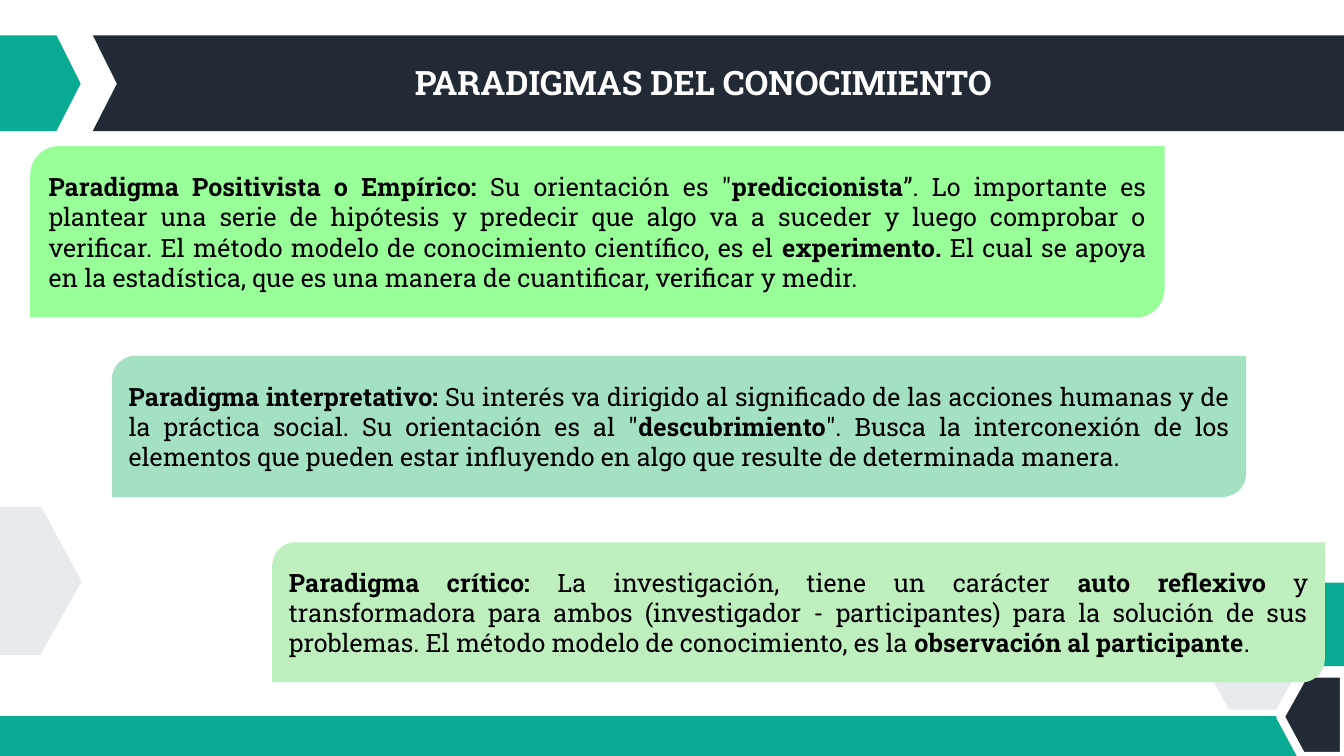
import pptx
import pptx.dml.color
import pptx.enum.shapes
import pptx.enum.text
import pptx.oxml
import pptx.oxml.ns
import pptx.util
from pptx.util import Inches

FONT = "Roboto Slab"
GREEN, DARK, GRAY, WHITE, BLACK = "09AB93", "222A35", "D9DEE2", "FFFFFF", "000000"
TITLE = "PARADIGMAS DEL CONOCIMIENTO"

# Each card: left, top, width, height, fill, text pieces that alternate bold and regular
CARDS = [
    (0.3, 1.45, 11.25, 1.7, "99FF99", [
        "Paradigma Positivista o Empírico: ",
        'Su orientación es "',
        "prediccionista",
        "”. Lo importante es plantear una serie de hipótesis y predecir que algo va a "
        "suceder y luego comprobar o verificar. El método modelo de conocimiento "
        "científico, es el ",
        "experimento.",
        " El cual se apoya en la estadística, que es una manera de cuantificar, "
        "verificar y medir.",
    ]),
    (1.11, 3.53, 11.25, 1.4, "A3E1C2", [
        "Paradigma interpretativo: ",
        "Su interés va dirigido al significado de las acciones humanas y de la práctica "
        'social. Su orientación es al "',
        "descubrimiento",
        '". Busca la interconexión de los elementos que pueden estar influyendo en algo '
        "que resulte de determinada manera.",
    ]),
    (2.7, 5.38, 10.44, 1.39, "BFEFBF", [
        "Paradigma crítico: ",
        "La investigación, tiene un carácter ",
        "auto reflexivo ",
        "y transformadora para ambos (investigador - participantes) para la solución de "
        "sus problemas. El método modelo de conocimiento, es la ",
        "observación al participante",
        ".",
    ]),
]

# Each outline: fill, opacity in percent, white border in points, corner points
OUTLINES = [
    (GRAY, 60, 0, [(11.96, 6.62), (12.19, 6.21), (12.66, 6.21), (12.89, 6.62),
                   (12.66, 7.04), (12.19, 7.04)]),
    (GREEN, 100, 0, [(12.95, 5.78), (13.33, 5.78), (13.33, 6.61), (12.95, 6.61),
                     (12.75, 6.2)]),
    (GREEN, 100, 0, [(0, 7.1), (13.33, 7.1), (13.33, 7.5), (0, 7.5)]),
    (DARK, 100, 6, [(13.33, 6.68), (13.33, 7.5), (12.91, 7.5), (12.7, 7.11),
                    (12.94, 6.68)]),
    (GREEN, 100, 0, [(0, 0.35), (0.56, 0.35), (0.8, 0.83), (0.56, 1.3), (0, 1.3)]),
    (DARK, 100, 0, [(0.92, 0.35), (13.33, 0.35), (13.33, 1.3), (0.92, 1.3),
                    (1.16, 0.83)]),
    (GRAY, 60, 0, [(0, 5.03), (0.41, 5.03), (0.81, 5.77), (0.4, 6.5), (0, 6.5)]),
]


def color(hex_string):
    return pptx.dml.color.RGBColor.from_string(hex_string)


def paint(shape, fill, opacity=100, border=0):
    shape.shadow.inherit = False
    shape.fill.solid()
    shape.fill.fore_color.rgb = color(fill)
    if opacity < 100:
        fill_color = shape.fill._xPr.find(".//" + pptx.oxml.ns.qn("a:srgbClr"))
        alpha = pptx.oxml.parse_xml(
            f'<a:alpha {pptx.oxml.ns.nsdecls("a")} val="{opacity * 1000}"/>')
        fill_color.append(alpha)
    if border:
        shape.line.color.rgb = color(WHITE)
        shape.line.width = pptx.util.Pt(border)
    else:
        shape.line.fill.background()


def style(paragraph, size, font_color, alignment):
    paragraph.alignment = alignment
    paragraph.font.name = FONT
    paragraph.font.size = pptx.util.Pt(size)
    paragraph.font.color.rgb = color(font_color)


def add_outline(slide, fill, opacity, border, points):
    corners = [(Inches(x), Inches(y)) for x, y in points]
    builder = slide.shapes.build_freeform(*corners[0])
    builder.add_line_segments(corners[1:], close=True)
    paint(builder.convert_to_shape(), fill, opacity, border)


def place_title(slide):
    title = slide.shapes.title
    title.left, title.top = Inches(2.13), Inches(0.56)
    title.width, title.height = Inches(9.69), Inches(0.5)
    frame = title.text_frame
    frame.text = TITLE
    frame.vertical_anchor = pptx.enum.text.MSO_ANCHOR.TOP
    frame.auto_size = pptx.enum.text.MSO_AUTO_SIZE.NONE
    style(frame.paragraphs[0], 24, WHITE, pptx.enum.text.PP_ALIGN.CENTER)
    frame.paragraphs[0].font.bold = True
    slide.shapes._spTree.append(title._element)  # bring in front of the band


def add_card(slide, left, top, width, height, fill, pieces):
    card = slide.shapes.add_shape(
        pptx.enum.shapes.MSO_SHAPE.ROUND_2_DIAG_RECTANGLE,
        Inches(left), Inches(top), Inches(width), Inches(height))
    paint(card, fill)
    frame = card.text_frame
    frame.word_wrap = True
    frame.vertical_anchor = pptx.enum.text.MSO_ANCHOR.MIDDLE
    paragraph = frame.paragraphs[0]
    style(paragraph, 18, BLACK, pptx.enum.text.PP_ALIGN.JUSTIFY)
    for index, piece in enumerate(pieces):
        run = paragraph.add_run()
        run.text = piece
        run.font.bold = index % 2 == 0


def main():
    presentation = pptx.Presentation()
    presentation.slide_width = Inches(13.33)
    presentation.slide_height = Inches(7.5)
    slide = presentation.slides.add_slide(presentation.slide_layouts[5])
    for outline in OUTLINES:
        add_outline(slide, *outline)
    place_title(slide)
    for card in CARDS:
        add_card(slide, *card)
    presentation.save("out.pptx")


if __name__ == "__main__":
    main()
